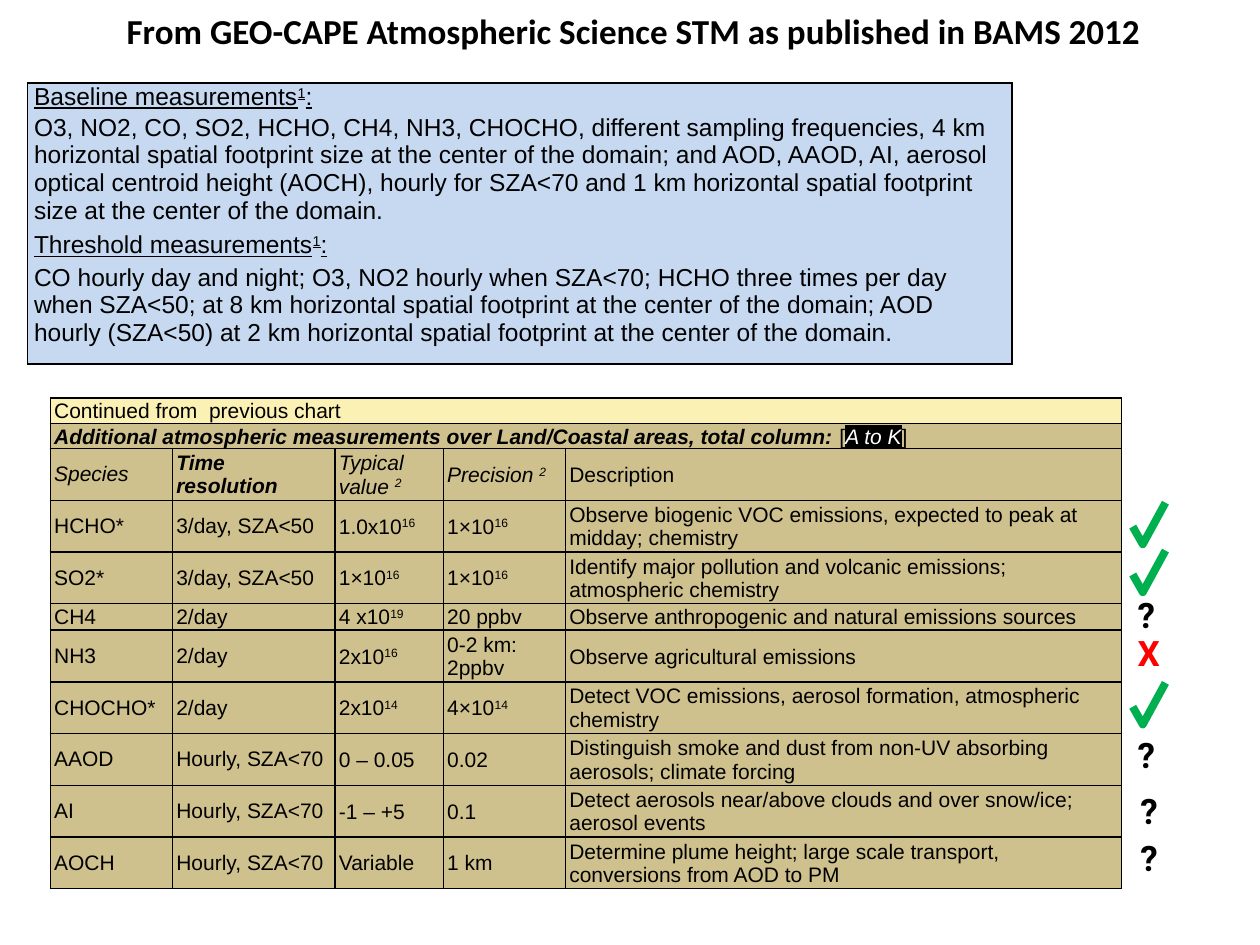
from typing import NamedTuple

import pptx
import pptx.dml.color
import pptx.enum.text
import pptx.oxml
import pptx.oxml.ns
import pptx.util
from pptx.util import Inches

RGBColor = pptx.dml.color.RGBColor
Anchor = pptx.enum.text.MSO_ANCHOR
Align = pptx.enum.text.PP_ALIGN

BLACK = RGBColor(0x00, 0x00, 0x00)
WHITE = RGBColor(0xFF, 0xFF, 0xFF)
RED = RGBColor(0xFF, 0x00, 0x00)
GREEN = RGBColor(0x00, 0xB0, 0x50)
BLUE = RGBColor(0xC6, 0xD9, 0xF1)
YELLOW = RGBColor(0xFB, 0xF1, 0xB5)
TAN = RGBColor(0xCF, 0xC1, 0x8D)
DRAWING = pptx.oxml.ns.nsdecls("a")


class Span(NamedTuple):
    text: str
    format: dict = {}
    raised: bool = False
    highlight: RGBColor | None = None


class Mark(NamedTuple):
    text: str
    left: float
    top: float
    color: RGBColor = BLACK


def add_span(para, span: Span, size: float, name: str, color=BLACK):
    run = para.add_run()
    run.text = span.text
    values = {"size": pptx.util.Pt(size), "name": name, **span.format}
    run.font.color.rgb = values.pop("color", color)
    for key, value in values.items():
        setattr(run.font, key, value)
    properties = run.font._element
    if span.raised:
        properties.set("baseline", "30000")
    if span.highlight is not None:
        highlight = pptx.oxml.parse_xml(
            f'<a:highlight {DRAWING}><a:srgbClr val="{span.highlight}"/></a:highlight>')
        properties.find(pptx.oxml.ns.qn("a:solidFill")).addnext(highlight)


def raised_spans(text: str, **format) -> list[Span]:
    """Split 'base^exponent' into a plain and a raised span."""
    base, _, exponent = text.partition("^")
    spans = [Span(base, format)]
    return spans + [Span(exponent, format, raised=True)] if exponent else spans


def fill_para(para, spans: list[Span], size: float, before=0, after=0):
    para.space_before = pptx.util.Pt(before)
    para.space_after = pptx.util.Pt(after)
    for span in spans:
        add_span(para, span, size, "Arial")


def style_cell(cell, color: RGBColor, anchor, side: float, top: float):
    values = {"margin_left": Inches(side), "margin_right": Inches(side),
              "margin_top": Inches(top), "margin_bottom": 0,
              "vertical_anchor": anchor}
    for key, value in values.items():
        setattr(cell, key, value)
    cell.fill.solid()
    cell.fill.fore_color.rgb = color
    properties = cell._tc.get_or_add_tcPr()
    for index, edge in enumerate(("lnL", "lnR", "lnT", "lnB")):
        properties.insert(index, pptx.oxml.parse_xml(
            f'<a:{edge} {DRAWING} w="12700"><a:solidFill>'
            f'<a:srgbClr val="{BLACK}"/></a:solidFill></a:{edge}>'))


def add_table(page, left: float, top: float, widths: list, heights: list):
    table = page.shapes.add_table(
        len(heights), len(widths), Inches(left), Inches(top),
        Inches(sum(widths)), Inches(sum(heights))).table
    table.first_row = table.horz_banding = False
    for column, width in zip(table.columns, widths):
        column.width = Inches(width)
    for row, height in zip(table.rows, heights):
        row.height = Inches(height)
    return table


def add_text(page, text: str, left, top, width, name: str, color=BLACK,
             align=Align.LEFT, indent=0.1):
    box = page.shapes.add_textbox(Inches(left), Inches(top), Inches(width), Inches(0.44))
    box.text_frame.word_wrap = True
    box.text_frame.margin_left = Inches(indent)
    para = box.text_frame.paragraphs[0]
    para.alignment = align
    add_span(para, Span(text, {"bold": True}), 20, name, color)


def add_check(page, top: float):
    points = [(8.99, top + 0.19), (9.07, top + 0.33), (9.25, top)]
    corners = [(Inches(x), Inches(y)) for x, y in points]
    builder = page.shapes.build_freeform(*corners[0])
    builder.add_line_segments(corners[1:], close=False)
    check = builder.convert_to_shape()
    check.shadow.inherit = False
    check.fill.background()
    check.line.color.rgb = GREEN
    check.line.width = pptx.util.Pt(4.5)


def heading(text: str) -> list[Span]:
    line = {"underline": True}
    return [Span(text, line), Span("1", line, raised=True), Span(":", line)]


# Measurement summary: spans, space before, space after
SUMMARY = [
    (heading("Baseline measurements"), 2, 2),
    ([Span("O3, NO2, CO, SO2, HCHO, CH4, NH3, CHOCHO, different sampling frequencies, "
           "4 km horizontal spatial footprint size at the center of the domain; and AOD, "
           "AAOD, AI, aerosol optical centroid height (AOCH), hourly for SZA<70 and 1 km "
           "horizontal spatial footprint size at the center of the domain.")], 0, 4),
    (heading("Threshold measurements"), 0, 3),
    ([Span("CO hourly day and night; O3, NO2 hourly when SZA<70; HCHO three times per day "
           "when SZA<50; at 8 km horizontal spatial footprint at the center of the domain; "
           "AOD hourly (SZA<50) at 2 km horizontal spatial footprint at the center of the "
           "domain.")], 0, 3),
]

# Species table
BANNERS = [
    ([Span("Continued from  previous chart")], YELLOW, Anchor.MIDDLE, 2),
    ([Span("Additional atmospheric measurements over Land/Coastal areas, total column:",
           {"bold": True, "italic": True}), Span(" ["),
      Span("A to K", {"italic": True, "color": WHITE}, highlight=BLACK), Span("]")],
     TAN, Anchor.BOTTOM, 3),
]
HEADER = [("Species", {"italic": True}), ("Time resolution", {"italic": True, "bold": True}),
          ("Typical value ^2", {"italic": True}), ("Precision ^2", {"italic": True}),
          ("Description", {})]
SPECIES = [
    ("HCHO*", "3/day, SZA<50", "1.0x10^16", "1×10^16",
     "Observe biogenic VOC emissions, expected to peak at midday; chemistry"),
    ("SO2*", "3/day, SZA<50", "1×10^16", "1×10^16",
     "Identify major pollution and volcanic emissions; atmospheric chemistry"),
    ("CH4", "2/day", "4 x10^19", "20 ppbv",
     "Observe anthropogenic and natural emissions sources"),
    ("NH3", "2/day", "2x10^16", "0-2 km: 2ppbv", "Observe agricultural emissions"),
    ("CHOCHO*", "2/day", "2x10^14", "4×10^14",
     "Detect VOC emissions, aerosol formation, atmospheric chemistry"),
    ("AAOD", "Hourly, SZA<70", "0 – 0.05", "0.02",
     "Distinguish smoke and dust from non-UV absorbing aerosols; climate forcing"),
    ("AI", "Hourly, SZA<70", "-1 – +5", "0.1",
     "Detect aerosols near/above clouds and over snow/ice; aerosol events"),
    ("AOCH", "Hourly, SZA<70", "Variable", "1 km",
     "Determine plume height; large scale transport, conversions from AOD to PM"),
]
WIDTHS = [0.97, 1.29, 0.86, 0.97, 4.41]
HEIGHTS = [0.2, 0.2, 0.41] + [0.21 if row[0] == "CH4" else 0.41 for row in SPECIES]

# Status marks beside the species rows
CHECK_TOPS = [3.99, 4.37, 5.42]
MARKS = [Mark("?", 8.72, 4.66), Mark("X", 8.72, 4.96, RED), Mark("?", 8.72, 5.77),
         Mark("?", 8.74, 6.22), Mark("?", 8.74, 6.59)]


def add_summary(page):
    cell = add_table(page, 0.22, 0.66, [7.81], [2.23]).cell(0, 0)
    style_cell(cell, BLUE, Anchor.TOP, 0.05, 0)
    frame = cell.text_frame
    for index, (spans, before, after) in enumerate(SUMMARY):
        para = frame.add_paragraph() if index else frame.paragraphs[0]
        fill_para(para, spans, 14, before, after)


def add_species(page):
    table = add_table(page, 0.4, 3.16, WIDTHS, HEIGHTS)
    last = len(WIDTHS) - 1
    for row, (spans, color, anchor, before) in enumerate(BANNERS):
        for column in range(len(WIDTHS)):
            style_cell(table.cell(row, column), color, anchor, 0.03, 0)
        table.cell(row, 0).merge(table.cell(row, last))
        fill_para(table.cell(row, 0).text_frame.paragraphs[0], spans, 12, before, 2)
    body = [HEADER] + [[(text, {}) for text in row] for row in SPECIES]
    for row, entries in enumerate(body, start=len(BANNERS)):
        for column, (text, format) in enumerate(entries):
            cell = table.cell(row, column)
            style_cell(cell, TAN, Anchor.MIDDLE, 0.03, 0.01 if column > 1 else 0)
            fill_para(cell.text_frame.paragraphs[0], raised_spans(text, **format), 12)


def main():
    deck = pptx.Presentation()
    deck.slide_width, deck.slide_height = Inches(10), Inches(7.5)
    page = deck.slides.add_slide(deck.slide_layouts[6])
    add_summary(page)
    add_text(page, "From GEO-CAPE Atmospheric Science STM as published in BAMS 2012",
             0.31, 0.03, 9.44, "Calibri", align=Align.CENTER)
    add_species(page)
    for top in CHECK_TOPS:
        add_check(page, top)
    for mark in MARKS:
        add_text(page, mark.text, mark.left, mark.top, 0.64, "Roboto", mark.color, indent=0.31)
    deck.save("out.pptx")


if __name__ == "__main__":
    main()
